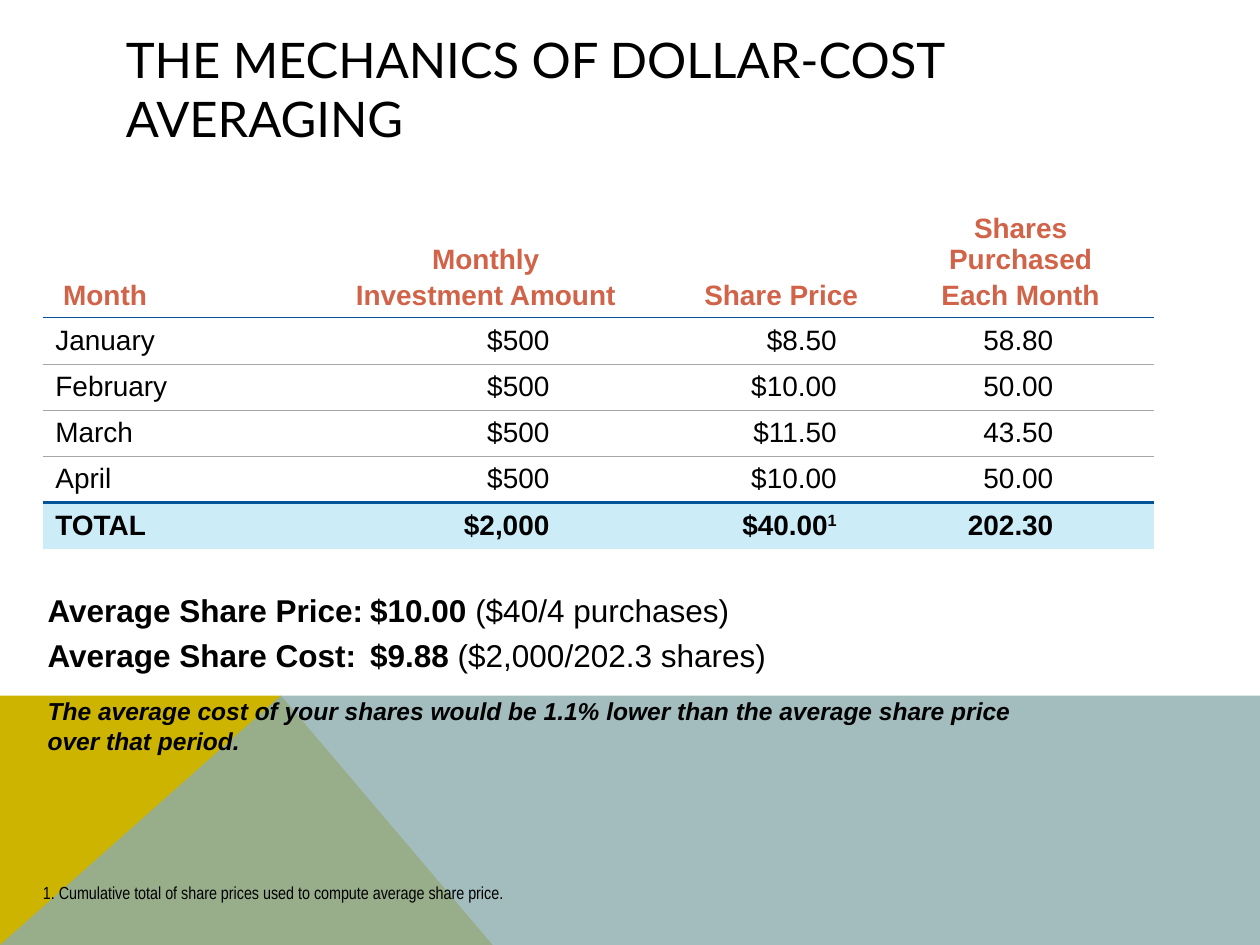
from dataclasses import dataclass

from lxml.etree import SubElement
from pptx import Presentation
from pptx.dml.color import RGBColor
from pptx.enum.text import MSO_ANCHOR as Anchor, PP_ALIGN as Align
from pptx.oxml.ns import qn
from pptx.util import Inches, Pt


@dataclass(frozen=True)
class Theme:
    black: str = "000000"
    heading: str = "D16349"
    rule: str = "A6A6A6"
    strong_rule: str = "005598"
    total_fill: str = "CCECF8"
    gold: str = "CCB400"
    teal: str = "8CADAE"
    title_font: str = "Lato"
    body_font: str = "Arial"
    note_font: str = "Arial Narrow"
    title_size: float = 28
    summary_size: float = 18
    table_size: float = 16
    remark_size: float = 14
    note_size: float = 10


THEME = Theme()


@dataclass(frozen=True)
class Span:
    text: str
    bold: bool = False
    italic: bool = False
    raised: bool = False


@dataclass(frozen=True)
class Style:
    font: str
    size: float
    color: str = THEME.black
    align: Align = Align.LEFT
    before: float = 0


@dataclass(frozen=True)
class Column:
    width: float
    heading: tuple[str, ...]
    align: Align
    right_inset: float


@dataclass(frozen=True)
class Rule:
    color: str
    width: float


COLUMNS = (
    Column(2.01, (" Month",), Align.LEFT, 0.1),
    Column(3.01, ("Monthly", "Investment Amount"), Align.RIGHT, 1),
    Column(1.68, ("Share Price",), Align.RIGHT, 0.4),
    Column(2.12, ("Shares Purchased", "Each Month"), Align.RIGHT, 0.8),
)
MONTHS = (
    ("January", "$500", "$8.50", "58.80"),
    ("February", "$500", "$10.00", "50.00"),
    ("March", "$500", "$11.50", "43.50"),
    ("April", "$500", "$10.00", "50.00"),
)
TOTAL = ("TOTAL", "$2,000", "$40.00", "202.30")
HEADER_HEIGHT, ROW_HEIGHT = 0.94, 0.367
HEADER_RULE = Rule(THEME.strong_rule, 0.5)
MONTH_RULE = Rule(THEME.rule, 0.25)
TOTAL_RULE = Rule(THEME.strong_rule, 1.5)
PLAIN_TABLE = "{2D5ABB26-0587-4C30-8999-92F81FD0307C}"


def add_paragraph(frame, spans: list[Span], style: Style, first: bool = False):
    para = frame.paragraphs[0] if first else frame.add_paragraph()
    para.alignment = style.align
    para.space_before = Pt(style.before)
    for span in spans:
        run = para.add_run()
        run.text = span.text
        run.font.name = style.font
        run.font.size = Pt(style.size)
        run.font.bold = span.bold
        run.font.italic = span.italic
        run.font.color.rgb = RGBColor.from_string(style.color)
        if span.raised:
            run.font._element.set("baseline", "30000")
    return para


def add_box(page, left: float, top: float, width: float, height: float, anchor: Anchor):
    box = page.shapes.add_textbox(*map(Inches, (left, top, width, height)))
    frame = box.text_frame
    frame.word_wrap = True
    frame.vertical_anchor = anchor
    return frame


def add_band(page, points: list[tuple[float, float]], color: str, opacity: int = 100) -> None:
    corners = [(Inches(x), Inches(y)) for x, y in points]
    builder = page.shapes.build_freeform(*corners[0])
    builder.add_line_segments(corners[1:], close=True)
    band = builder.convert_to_shape()
    band.shadow.inherit = False
    band.line.fill.background()
    band.fill.solid()
    band.fill.fore_color.rgb = RGBColor.from_string(color)
    if opacity < 100:
        tint = band._element.spPr.find(f".//{qn('a:srgbClr')}")
        SubElement(tint, qn("a:alpha"), val=str(opacity * 1000))


def set_borders(cell, above: Rule | None, below: Rule | None) -> None:
    properties = cell._tc.get_or_add_tcPr()
    for side, rule in (("L", None), ("R", None), ("T", above), ("B", below)):
        line = SubElement(properties, qn(f"a:ln{side}"))
        if rule is None:
            SubElement(line, qn("a:noFill"))
        else:
            line.set("w", str(Pt(rule.width)))
            fill = SubElement(line, qn("a:solidFill"))
            SubElement(fill, qn("a:srgbClr"), val=rule.color)


def fill_cell(cell, paragraphs: list[list[Span]], style: Style, anchor: Anchor, inset: float) -> None:
    cell.vertical_anchor = anchor
    cell.margin_right = Inches(inset)
    for index, spans in enumerate(paragraphs):
        add_paragraph(cell.text_frame, spans, style, first=index == 0)


def add_purchase_table(page) -> None:
    rows = (*MONTHS, TOTAL)
    width = sum(column.width for column in COLUMNS)
    height = HEADER_HEIGHT + ROW_HEIGHT * len(rows)
    frame = page.shapes.add_table(
        len(rows) + 1, len(COLUMNS), *map(Inches, (0.34, 1.58, width, height)))
    table = frame.table
    table.first_row = table.horz_banding = False
    table._tbl.tblPr.find(qn("a:tableStyleId")).text = PLAIN_TABLE
    for index, row in enumerate(table.rows):
        row.height = Inches(ROW_HEIGHT if index else HEADER_HEIGHT)
    rules = [None, HEADER_RULE, *[MONTH_RULE] * (len(MONTHS) - 1), TOTAL_RULE, None]

    for x, column in enumerate(COLUMNS):
        table.columns[x].width = Inches(column.width)
        align = Align.CENTER if x else Align.LEFT
        heading = Style(THEME.body_font, THEME.table_size, THEME.heading, align, 2.4)
        lines = [[Span(line, bold=True)] for line in column.heading]
        fill_cell(table.cell(0, x), lines, heading, Anchor.BOTTOM, 0.1)
        value = Style(THEME.body_font, THEME.table_size, align=column.align, before=2.4)
        for y, row in enumerate(rows, 1):
            is_total = row is TOTAL
            spans = [Span(row[x], bold=is_total)]
            if is_total and column.heading == ("Share Price",):
                spans.append(Span("1", bold=True, raised=True))
            fill_cell(table.cell(y, x), [spans], value, Anchor.MIDDLE, column.right_inset)
        for y in range(len(rows) + 1):
            cell = table.cell(y, x)
            set_borders(cell, rules[y], rules[y + 1])
            if y == len(rows):
                cell.fill.solid()
                cell.fill.fore_color.rgb = RGBColor.from_string(THEME.total_fill)
            else:
                cell.fill.background()


def add_summary(page) -> None:
    frame = add_box(page, 0.28, 4.42, 8.24, 1.61, Anchor.TOP)
    frame.margin_top = Inches(0.27)
    averages = (
        ("Average Share Price:\t$10.00 ", "($40/4 purchases)", 0),
        ("Average Share Cost:\t$9.88 ", "($2,000/202.3 shares)", 4),
    )
    for index, (result, working, before) in enumerate(averages):
        style = Style(THEME.body_font, THEME.summary_size, before=before)
        para = add_paragraph(frame, [Span(result, bold=True), Span(working)], style, index == 0)
        stops = SubElement(para._p.get_or_add_pPr(), qn("a:tabLst"))
        SubElement(stops, qn("a:tab"), pos=str(Inches(2.56)), algn="l")
    remark = "The average cost of your shares would be 1.1% lower than the average share price over that period."
    add_paragraph(frame, [Span(remark, bold=True, italic=True)],
                  Style(THEME.body_font, THEME.remark_size, before=13))


def main() -> None:
    deck = Presentation()
    deck.slide_width, deck.slide_height = Inches(10), Inches(7.5)
    page = deck.slides.add_slide(deck.slide_layouts[6])
    add_band(page, [(0, 7.5), (0, 5.52), (2.23, 5.52), (3.91, 7.5)], THEME.gold)
    add_band(page, [(0, 7.5), (2.23, 5.52), (10, 5.52), (10, 7.5)], THEME.teal, 80)
    title = add_box(page, 0.9, 0.4, 8.22, 0.6, Anchor.MIDDLE)
    add_paragraph(title, [Span("THE MECHANICS OF DOLLAR-COST AVERAGING")],
                  Style(THEME.title_font, THEME.title_size), first=True)
    add_summary(page)
    add_purchase_table(page)
    note = add_box(page, 0.34, 6.95, 9.31, 0.27, Anchor.BOTTOM)
    note.margin_left = note.margin_right = 0
    add_paragraph(note, [Span("1. Cumulative total of share prices used to compute average share price.")],
                  Style(THEME.note_font, THEME.note_size), first=True)
    deck.save("out.pptx")


if __name__ == "__main__":
    main()
